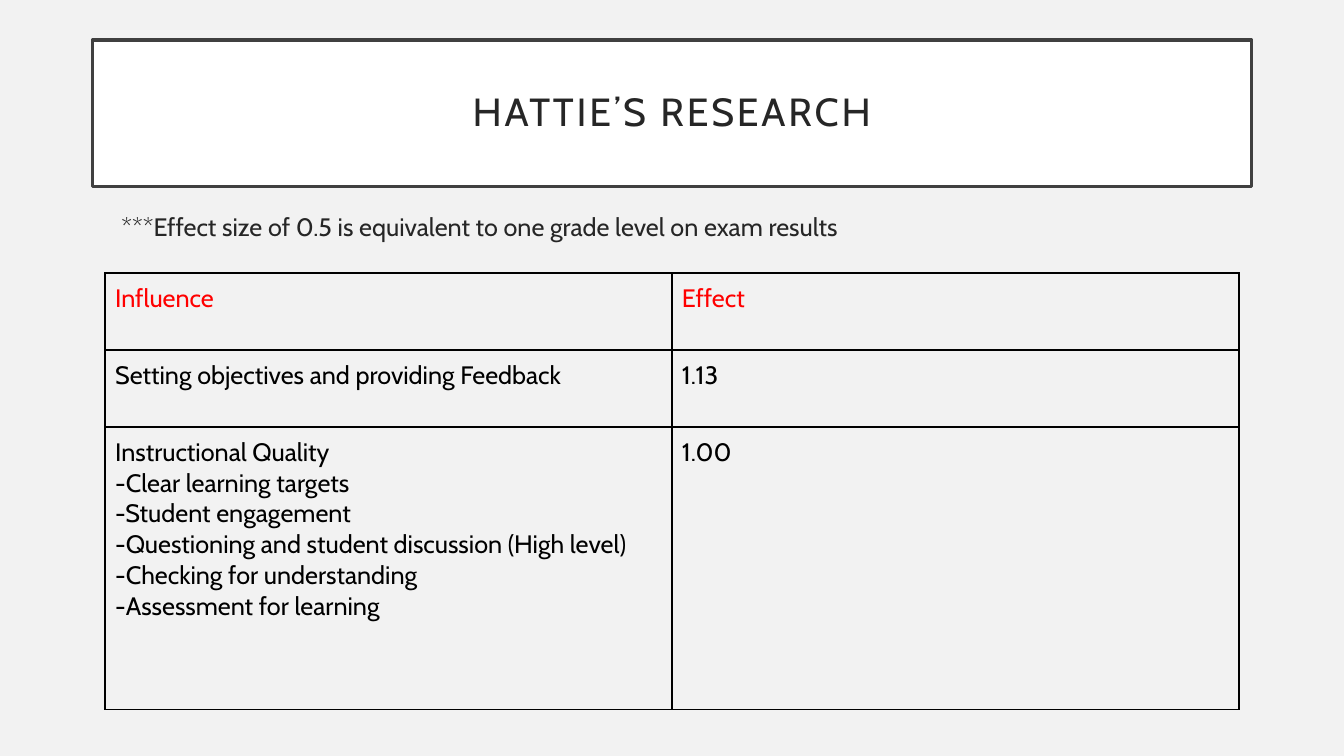
import pptx
import pptx.util
import pptx.dml.color
import pptx.enum.shapes
import pptx.enum.text
import pptx.oxml
import pptx.oxml.ns

Cm, Pt = pptx.util.Cm, pptx.util.Pt
FONT = "Cabin"
INSET = Cm(0.25)
COLORS = {"back": "F2F2F2", "panel": "FFFFFF", "frame": "404040",
          "text": "262626", "head": "FF0000", "cell": "000000"}
ROWS = [
    ("Influence", "Effect"),
    ("Setting objectives and providing Feedback", "1.13"),
    ("Instructional Quality\n-Clear learning targets\n-Student engagement\n"
     "-Questioning and student discussion (High level)\n"
     "-Checking for understanding\n-Assessment for learning", "1.00"),
]
HEIGHTS = [Cm(1.94), Cm(1.94), Cm(7.12)]


def color(name):
    return pptx.dml.color.RGBColor.from_string(COLORS[name])


def style(frame, size, name):
    for para in frame.paragraphs:
        for run in para.runs:
            run.font.name = FONT
            run.font.size = Pt(size)
            run.font.bold = False
            run.font.color.rgb = color(name)


def pad(item):
    item.margin_left = item.margin_right = INSET
    item.margin_top = item.margin_bottom = INSET


def add_title(slide, box):
    panel = slide.shapes.add_shape(
        pptx.enum.shapes.MSO_SHAPE.RECTANGLE, *box)
    panel.shadow.inherit = False
    panel.fill.solid()
    panel.fill.fore_color.rgb = color("panel")
    panel.line.color.rgb = color("frame")
    panel.line.width = Pt(2.5)
    frame = panel.text_frame
    pad(frame)
    frame.word_wrap = True
    frame.vertical_anchor = pptx.enum.text.MSO_ANCHOR.MIDDLE
    frame.text = "HATTIE’S RESEARCH"
    para = frame.paragraphs[0]
    para.alignment = pptx.enum.text.PP_ALIGN.CENTER
    para.line_spacing = 0.9
    style(frame, 28, "text")
    # Letter spacing in hundredths of a point
    para.runs[0].font._element.set("spc", "200")


def add_note(slide, box):
    frame = slide.shapes.add_textbox(*box).text_frame
    pad(frame)
    frame.word_wrap = True
    frame.text = ("***Effect size of 0.5 is equivalent to one grade level "
                  "on exam results")
    props = frame.paragraphs[0]._p.get_or_add_pPr()
    props.set("marL", str(Cm(0.48)))
    props.set("indent", "0")
    style(frame, 18, "text")


def add_border(cell):
    props = cell._tc.get_or_add_tcPr()
    space = pptx.oxml.ns.nsdecls("a")
    for spot, side in enumerate(("lnL", "lnR", "lnT", "lnB")):
        props.insert(spot, pptx.oxml.parse_xml(
            f'<a:{side} {space} w="{Pt(1.5)}"><a:solidFill>'
            f'<a:srgbClr val="{COLORS["cell"]}"/></a:solidFill></a:{side}>'))


def add_grid(slide, box):
    grid = slide.shapes.add_table(len(ROWS), len(ROWS[0]), *box).table
    grid.first_row = grid.horz_banding = False
    for row, high in zip(grid.rows, HEIGHTS):
        row.height = high
    for y, texts in enumerate(ROWS):
        for x, text in enumerate(texts):
            cell = grid.cell(y, x)
            pad(cell)
            cell.fill.background()
            cell.text_frame.text = text
            style(cell.text_frame, 18, "cell" if y else "head")
            add_border(cell)


def main():
    deck = pptx.Presentation()
    deck.slide_width, deck.slide_height = Cm(33.87), Cm(19.05)
    slide = deck.slides.add_slide(deck.slide_layouts[6])
    slide.background.fill.solid()
    slide.background.fill.fore_color.rgb = color("back")
    # Title panel, note, table of influences
    add_title(slide, (Cm(2.33), Cm(1.01), Cm(29.21), Cm(3.69)))
    add_note(slide, (Cm(2.33), Cm(5.08), Cm(29.21), Cm(12.75)))
    add_grid(slide, (Cm(2.65), Cm(6.88), Cm(28.57), sum(HEIGHTS)))
    deck.save("out.pptx")


if __name__ == "__main__":
    main()
